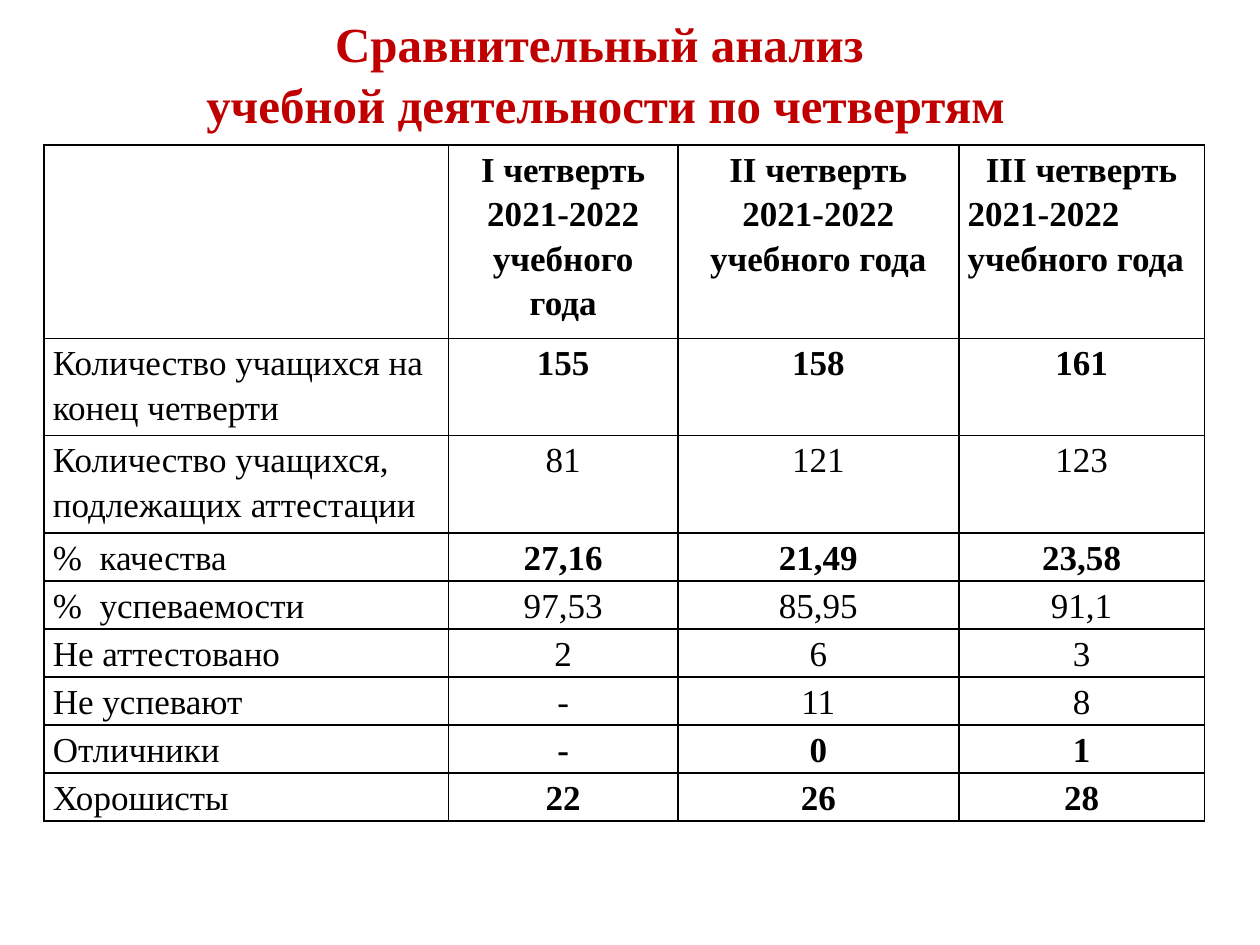
import pptx
import pptx.dml.color
import pptx.enum.text
import pptx.oxml
import pptx.oxml.ns
import pptx.util
from pptx.util import Inches

RED = pptx.dml.color.RGBColor(0xC0, 0x00, 0x00)
BLACK = pptx.dml.color.RGBColor(0x00, 0x00, 0x00)
FONT = "Times New Roman"
LEFT = pptx.enum.text.PP_ALIGN.LEFT
CENTER = pptx.enum.text.PP_ALIGN.CENTER

TITLE_LINES = ["Сравнительный анализ ", "учебной деятельности по четвертям"]
COLUMN_WIDTHS = [3.21, 1.82, 2.23, 1.95]
ROW_HEIGHTS = [1.53, 0.77, 0.77] + [0.38] * 6
YEAR = "2021-2022 учебного года"
HEADERS = [f"{number} четверть\n{YEAR}" for number in ("I", "II", "III")]
ROWS = [
    ("Количество учащихся на конец четверти", ["155", "158", "161"], True),
    ("Количество учащихся,\nподлежащих аттестации", ["81", "121", "123"], False),
    ("%  качества", ["27,16", "21,49", "23,58"], True),
    ("%  успеваемости", ["97,53", "85,95", "91,1"], False),
    ("Не аттестовано", ["2", "6", "3"], False),
    ("Не успевают", ["-", "11", "8"], False),
    ("Отличники", ["-", "0", "1"], True),
    ("Хорошисты", ["22", "26", "28"], True),
]


def write_lines(frame, lines, size, color, bold, align, spacing):
    """Write each line as a paragraph with one formatted run."""
    for index, line in enumerate(lines):
        para = frame.add_paragraph() if index else frame.paragraphs[0]
        para.alignment = align
        para.line_spacing = spacing
        span = para.add_run()
        span.text = line
        span.font.name = FONT
        span.font.size = pptx.util.Pt(size)
        span.font.bold = bold
        span.font.color.rgb = color


def add_borders(cell):
    """Draw a thin black line on all four sides of a cell."""
    properties = cell._tc.get_or_add_tcPr()
    for position, side in enumerate(("lnL", "lnR", "lnT", "lnB")):
        line = pptx.oxml.parse_xml(
            f'<a:{side} {pptx.oxml.ns.nsdecls("a")} w="12700"><a:solidFill>'
            f'<a:srgbClr val="{BLACK}"/></a:solidFill></a:{side}>'
        )
        properties.insert(position, line)


def fill_cell(cell, text, bold, align):
    """Format one table cell and write its text."""
    cell.margin_left = cell.margin_right = Inches(0.07)
    cell.margin_top = cell.margin_bottom = 0
    cell.fill.background()
    add_borders(cell)
    if text:
        write_lines(cell.text_frame, text.split("\n"), 20, BLACK, bold, align, 1.15)


def place_title(page, left, top, width, height):
    """Place the red two-line title."""
    title = page.shapes.title
    title.left, title.top, title.width, title.height = left, top, width, height
    frame = title.text_frame
    frame.word_wrap = True
    frame.auto_size = pptx.enum.text.MSO_AUTO_SIZE.NONE
    frame.vertical_anchor = pptx.enum.text.MSO_ANCHOR.TOP
    frame.margin_top = Inches(0.07)
    write_lines(frame, TITLE_LINES, 28, RED, True, CENTER, 1.05)


def place_table(page, left, top, width, height):
    """Place the comparison of the three quarters."""
    box = page.shapes.add_table(len(ROW_HEIGHTS), len(COLUMN_WIDTHS), left, top, width, height)
    table = box.table
    table.first_row = table.horz_banding = False
    for column, share in zip(table.columns, COLUMN_WIDTHS):
        column.width = int(width * share / sum(COLUMN_WIDTHS))
    for row, share in zip(table.rows, ROW_HEIGHTS):
        row.height = int(height * share / sum(ROW_HEIGHTS))
    for row, (label, values, bold) in zip(table.rows, [("", HEADERS, True)] + ROWS):
        label_cell, *value_cells = row.cells
        fill_cell(label_cell, label, False, LEFT)
        for cell, value in zip(value_cells, values):
            fill_cell(cell, value, bold, CENTER)
    last_header_year = table.cell(0, 3).text_frame.paragraphs[1]
    last_header_year.alignment = LEFT
    last_header_year.space_after = pptx.util.Pt(10)


def main():
    """Build the deck and save it."""
    deck = pptx.Presentation()
    deck.slide_width, deck.slide_height = Inches(10), Inches(7.5)
    page = deck.slides.add_slide(deck.slide_layouts[5])
    place_title(page, Inches(0.12), Inches(0.01), Inches(9.37), Inches(1.51))
    place_table(page, Inches(0.35), Inches(1.15), Inches(9.21), Inches(5.37))
    deck.save("out.pptx")


if __name__ == "__main__":
    main()
